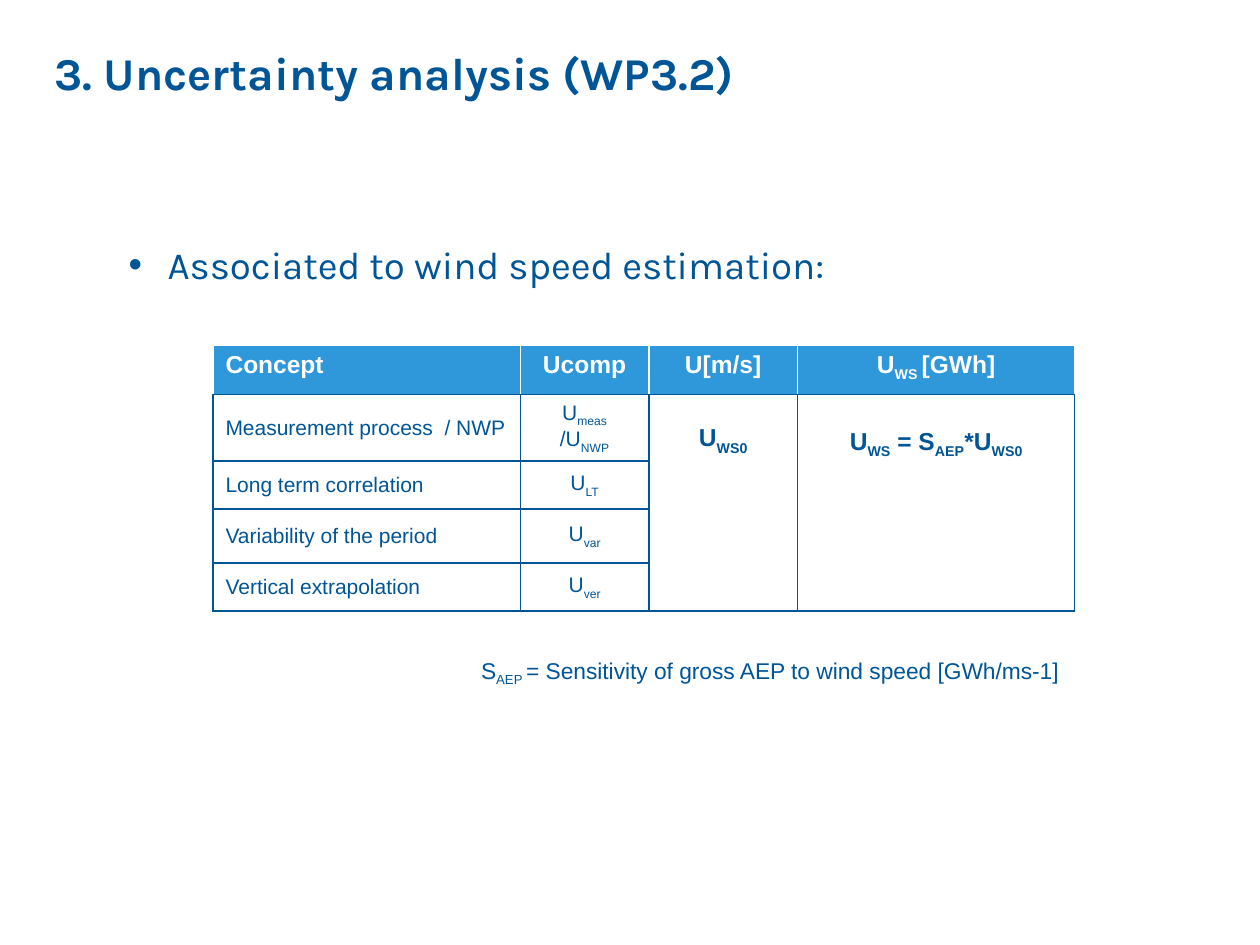
from lxml import etree
from pptx import Presentation
from pptx.dml.color import RGBColor
from pptx.enum.text import MSO_ANCHOR as Anchor, PP_ALIGN as Align
from pptx.oxml.ns import qn
from pptx.util import Inches, Pt

COLORS = {"navy": "005596", "blue": "2E98DB", "white": "FFFFFF"}


def write(text_frame, text, size, font="Arial", color="navy", bold=False, align=Align.LEFT):
    """Fill a text frame; parts between underscores become subscripts."""
    lines = text.split("\n")
    text_frame.text = "\n" * (len(lines) - 1)
    for paragraph, line in zip(text_frame.paragraphs, lines):
        paragraph.alignment = align
        for index, part in enumerate(line.split("_")):
            if not part:
                continue
            run = paragraph.add_run()
            run.text = part
            run.font.name, run.font.size, run.font.bold = font, Pt(size), bold
            run.font.color.rgb = RGBColor.from_string(COLORS[color])
            if index % 2:
                run.font._element.set("baseline", "-25000")


def style_cell(cell, fill, side_colors):
    """Draw the borders of a cell, then its fill."""
    properties = cell._tc.get_or_add_tcPr()
    for side, color in zip("LRTB", side_colors):
        line = etree.SubElement(properties, qn(f"a:ln{side}"), w=str(Pt(1)))
        solid = etree.SubElement(line, qn("a:solidFill"))
        etree.SubElement(solid, qn("a:srgbClr"), val=COLORS[color])
    cell.fill.solid()
    cell.fill.fore_color.rgb = RGBColor.from_string(COLORS[fill])


presentation = Presentation()
presentation.slide_width, presentation.slide_height = Inches(10), Inches(7.5)
slide = presentation.slides.add_slide(presentation.slide_layouts[1])

# Title
title = slide.shapes.title
title.left, title.top, title.width, title.height = map(Inches, (0.33, 0.25, 8.75, 0.65))
title.text_frame.vertical_anchor = Anchor.MIDDLE
write(title.text_frame, "3. Uncertainty analysis (WP3.2)", 26, "Karla", bold=True)

# Bullet
body = slide.placeholders[1]
body.left, body.top, body.width, body.height = map(Inches, (0.42, 1.86, 8.67, 4.95))
write(body.text_frame, "Associated to wind speed estimation:", 22, "Karla")
bullet = body.text_frame.paragraphs[0]
bullet.level = 1
bullet.space_before = Pt(0)
bullet_properties = bullet._p.get_or_add_pPr()
bullet_properties.set("marL", str(Inches(0.81)))
bullet_properties.set("indent", str(Inches(-0.31)))
etree.SubElement(bullet_properties, qn("a:buFont"), typeface="Arial")
etree.SubElement(bullet_properties, qn("a:buChar"), char="•")

# Uncertainty table
headers = ["Concept", "Ucomp", "U[m/s]", "U_WS _[GWh]"]
components = [
    ("Measurement process  / NWP", "U_meas_\n/U_NWP_"),
    ("Long term correlation", "U_LT_"),
    ("Variability of the period", "U_var_"),
    ("Vertical extrapolation", "U_ver_"),
]
totals = [(2, "U_WS0_", 0.24), (3, "U_WS_ = S_AEP_*U_WS0_", 0.27)]
column_widths = [2.44, 1.02, 1.18, 2.2]
row_heights = [0.39, 0.53, 0.38, 0.43, 0.38]

table = slide.shapes.add_table(
    len(row_heights), len(column_widths), Inches(1.69), Inches(2.74),
    Inches(sum(column_widths)), Inches(sum(row_heights))).table
for column, width in zip(table.columns, column_widths):
    column.width = Inches(width)
for row, height in zip(table.rows, row_heights):
    row.height = Inches(height)

for column, text in enumerate(headers):
    cell = table.cell(0, column)
    style_cell(cell, "blue", ["white", "white", "white", "navy"])
    write(cell.text_frame, text, 14, color="white", bold=True,
          align=Align.CENTER if column else Align.LEFT)

for row, texts in enumerate(components, start=1):
    for column in range(len(headers)):
        style_cell(table.cell(row, column), "white", ["navy"] * 4)
    for column, text in enumerate(texts):
        cell = table.cell(row, column)
        cell.vertical_anchor = Anchor.MIDDLE
        write(cell.text_frame, text, 12, align=Align.CENTER if column else Align.LEFT)

# Combined uncertainty, one merged cell per column
for column, text, margin_top in totals:
    cell = table.cell(1, column)
    cell.merge(table.cell(len(components), column))
    cell.margin_top = Inches(margin_top)
    write(cell.text_frame, text, 14, bold=True, align=Align.CENTER)

# Note on the sensitivity
note = slide.shapes.add_textbox(Inches(3.72), Inches(5.16), Inches(5.06), Inches(0.32))
note.text_frame.word_wrap = True
write(note.text_frame, "S_AEP _= Sensitivity of gross AEP to wind speed [GWh/ms-1]", 13)

presentation.save("out.pptx")
